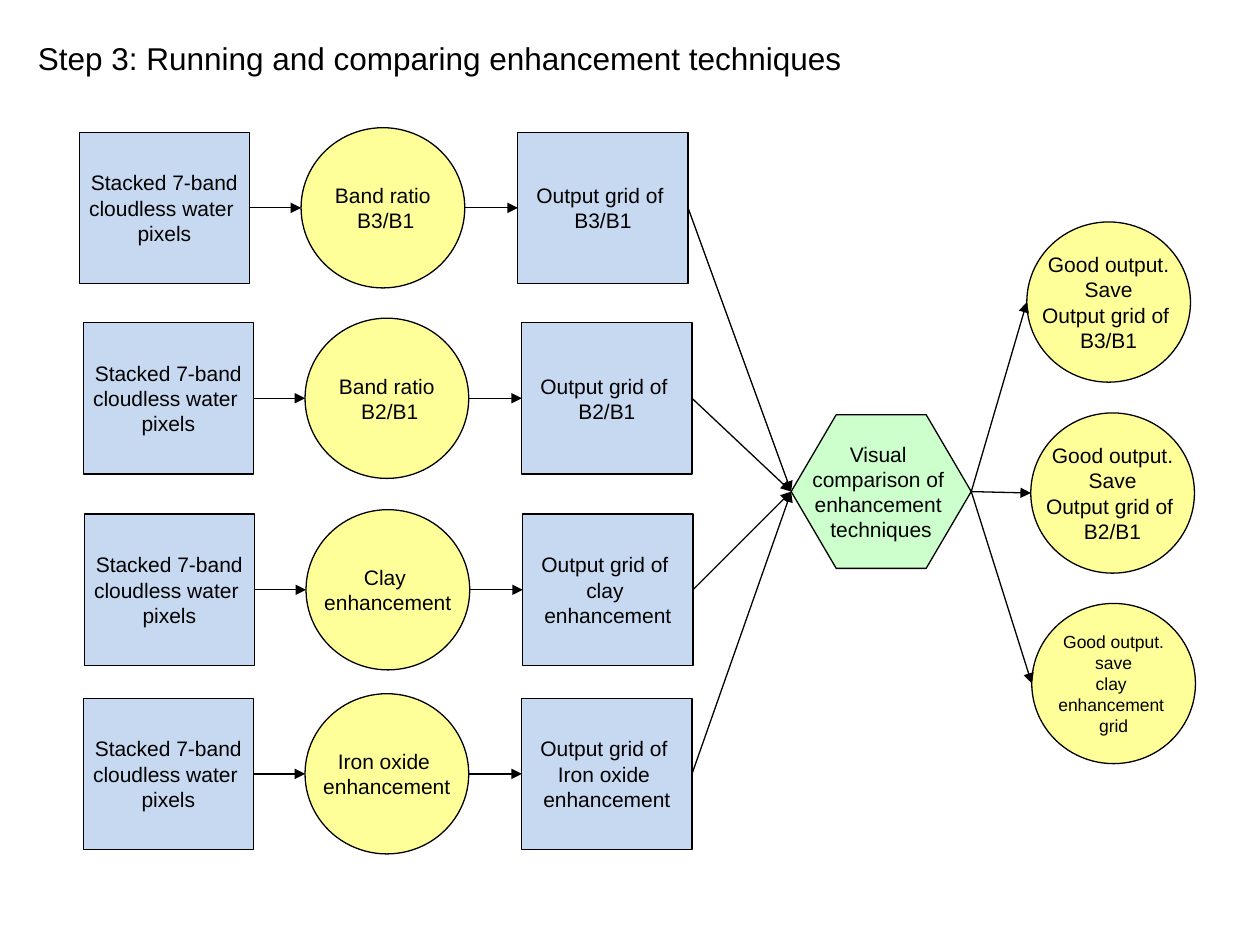
from pptx import Presentation
from pptx.dml.color import RGBColor
from pptx.enum import shapes, text
from pptx.oxml.ns import qn
from pptx.util import Cm, Pt
from lxml import etree

TITLE = "Step 3: Running and comparing enhancement techniques"
INPUT = "Stacked 7-band\ncloudless water \npixels"
# left edge, middle height, technique, output grid
ROWS = [
    (1.6, 4.19, "Band ratio\n B3/B1", "B3/B1"),
    (1.68, 8.03, "Band ratio\n B2/B1", "B2/B1"),
    (1.7, 11.89, "Clay \nenhancement", "clay \nenhancement"),
    (1.68, 15.6, "Iron oxide \nenhancement", "Iron oxide \nenhancement"),
]
CHECK = (15.95, 9.91, "Visual \ncomparison of \nenhancement \ntechniques")
# left edge, middle height, text, text size
SAVES = [
    (20.7, 6.09, "Good output.\nSave\nOutput grid of \nB3/B1", 12),
    (20.78, 9.94, "Good output.\nSave\nOutput grid of \nB2/B1", 12),
    (20.8, 13.78, "Good output.\nsave\nclay \nenhancement \ngrid", 10),
]
COLORS = {"data": "C6D9F1", "step": "FFFF99", "check": "CCFFCC", "ink": "000000"}
KINDS = shapes.MSO_SHAPE
# kind of node: preset, width, height
NODES = {
    "data": (KINDS.FLOWCHART_PROCESS, 3.43, 3.05),
    "step": (KINDS.OVAL, 3.3, 3.23),
    "check": (KINDS.HEXAGON, 3.63, 3.1),
}
STEP_X, GRID_X = 4.47, 8.84  # offsets from the left edge of a row
LEFT, RIGHT = 1, 3

prs = Presentation()
prs.slide_width, prs.slide_height = Cm(25.4), Cm(19.05)
slide = prs.slides.add_slide(prs.slide_layouts[5])


def color(name):
    return RGBColor.from_string(COLORS[name])


def write(shape, words, size=12, align=text.PP_ALIGN.CENTER, wrap=False):
    frame = shape.text_frame
    frame.text = words
    frame.word_wrap = wrap
    frame.auto_size = text.MSO_AUTO_SIZE.NONE
    frame.vertical_anchor = text.MSO_ANCHOR.MIDDLE
    for para in frame.paragraphs:
        para.alignment = align
        para.font.name, para.font.size = "Arial", Pt(size)
        para.font.color.rgb = color("ink")


def node(kind, x, mid, words, size=12):
    preset, w, h = NODES[kind]
    shape = slide.shapes.add_shape(preset, Cm(x), Cm(mid - h / 2), Cm(w), Cm(h))
    shape.shadow.inherit = False
    shape.fill.solid()
    shape.fill.fore_color.rgb = color(kind)
    shape.line.color.rgb = color("ink")
    shape.line.width = Pt(0.75)
    write(shape, words, size)
    return shape


def arrow(start, end):
    """Run from the right side of start to the left side of end."""
    line = slide.shapes.add_connector(
        shapes.MSO_CONNECTOR.STRAIGHT,
        start.left + start.width, start.top + start.height // 2,
        end.left, end.top + end.height // 2)
    box = KINDS.FLOWCHART_PROCESS
    if start.auto_shape_type == box:
        line.begin_connect(start, RIGHT)
    if end.auto_shape_type == box:
        line.end_connect(end, LEFT)
    line.line.color.rgb = color("ink")
    line.line.width = Pt(0.75)
    etree.SubElement(line.line._get_or_add_ln(), qn("a:tailEnd"), type="triangle")
    etree.SubElement(line._element.spPr, qn("a:effectLst"))


# Title
title = slide.shapes.title
title.left, title.top, title.width, title.height = Cm(0.51), Cm(0.66), Cm(23.75), Cm(1.02)
write(title, TITLE, size=18, align=text.PP_ALIGN.LEFT, wrap=True)

# Comparison
check = node("check", *CHECK)
check.adjustments[0] = 0.293

# One row per technique
for x, mid, method, result in ROWS:
    source = node("data", x, mid, INPUT)
    step = node("step", x + STEP_X, mid, method)
    grid = node("data", x + GRID_X, mid, "Output grid of \n" + result)
    for start, end in ((source, step), (step, grid), (grid, check)):
        arrow(start, end)

# Saved outputs
for save in SAVES:
    arrow(check, node("step", *save))

prs.save("out.pptx")
